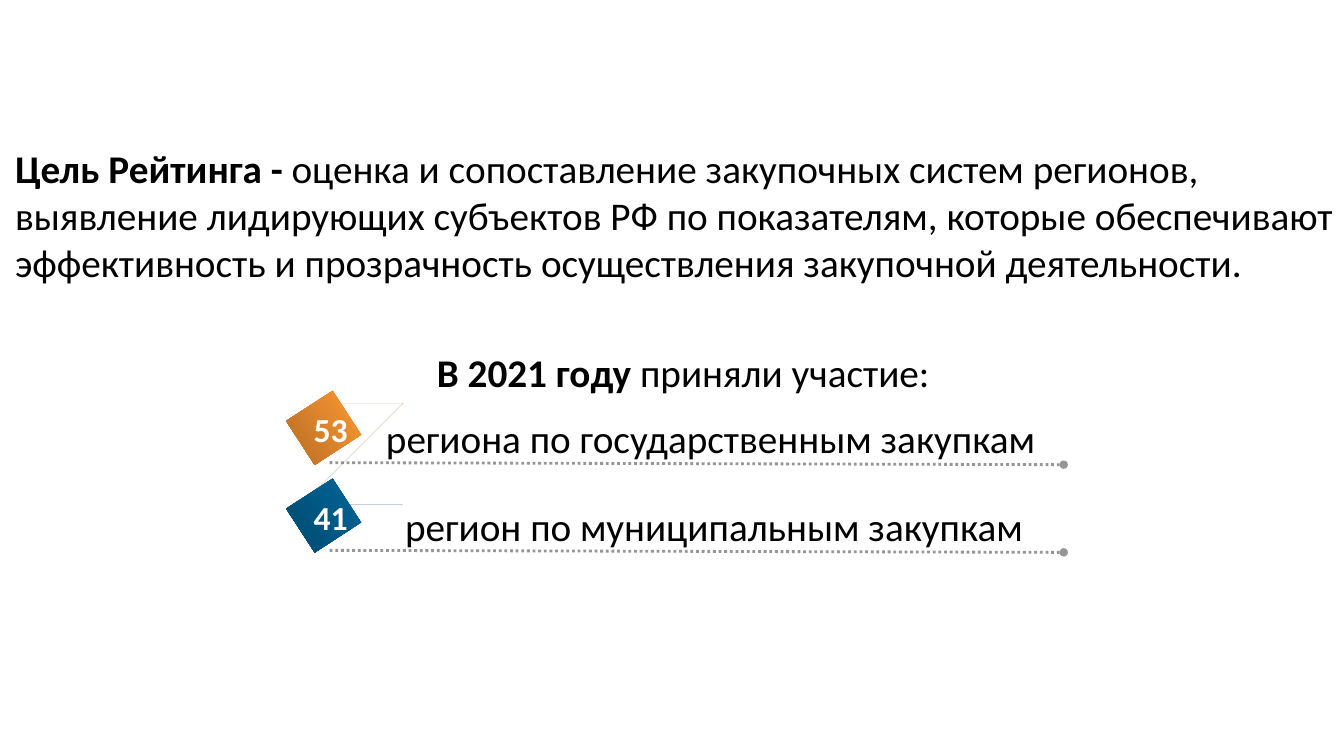
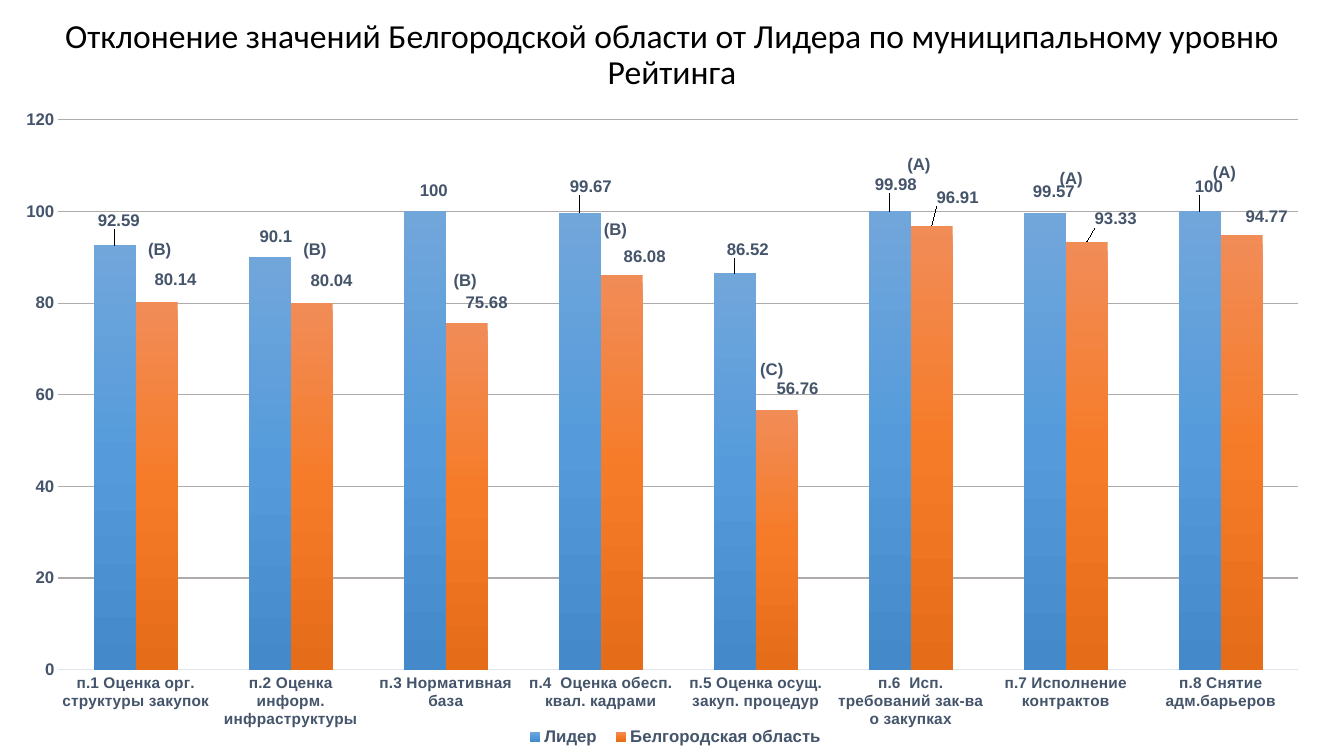
from lxml import etree
from pptx import Presentation
from pptx.chart.data import CategoryChartData
from pptx.dml.color import RGBColor
from pptx.enum.chart import XL_CHART_TYPE, XL_LABEL_POSITION, XL_LEGEND_POSITION, XL_TICK_MARK
from pptx.enum.dml import MSO_LINE
from pptx.enum.shapes import MSO_CONNECTOR, MSO_SHAPE
from pptx.enum.text import MSO_ANCHOR, PP_ALIGN
from pptx.oxml.ns import qn
from pptx.util import Inches, Pt

BLACK, WHITE, SLATE, GREY = "000000", "FFFFFF", "44546A", "969696"
AXIS, GRID = "E0E5EB", "AFABAB"
BODY_FONT, CHART_FONT = "Calibri", "Arial"

PARTICIPANTS = [
    ("53", "региона по государственным закупкам", 3.73, ("FF9933", "B66D24", "EE8D2D", "704214")),
    ("41", "регион по муниципальным закупкам", 3.92, ("006699", "00496D", "005A88", "002D44")),
]
CATEGORIES = [
    "п.1 Оценка орг. структуры закупок", "п.2 Оценка информ. инфраструктуры",
    "п.3 Нормативная база", "п.4  Оценка обесп. квал. кадрами",
    "п.5 Оценка осущ. закуп. процедур", "п.6  Исп. требований зак-ва о закупках",
    "п.7 Исполнение контрактов", "п.8 Снятие адм.барьеров",
]
SERIES = [
    ("Лидер", [92.59, 90.1, 100, 99.67, 86.52, 99.98, 99.57, 100],
     ["71A6DB", "559BDB", "448ACA"],
     [(4, -12), (6, -7), (9, -8), (11, -13), (13, -11), (6, -14), (9, -9), (9, -12)]),
    ("Белгородская область", [80.14, 80.04, 75.68, 86.08, 56.76, 96.91, 93.33, 94.77],
     ["F18C57", "F67B28", "E56C19"],
     [(19, -10), (20, -9), (20, -7), (23, -6), (21, -8), (26, -15), (29, -10), (25, -6)]),
]
GRADES = [("(В)", 1.37, 2.32), ("(B)", 2.91, 2.32), ("(B)", 4.4, 2.63), ("(B)", 5.89, 2.12),
          ("(С)", 7.44, 3.51), ("(A)", 8.9, 1.48), ("(A)", 10.41, 1.61), ("(A)", 11.93, 1.56)]


def rgb(value):
    """Turn a hex string into a colour."""
    return RGBColor.from_string(value)


def style(font, size, color=BLACK, bold=False, name=BODY_FONT):
    """Format a font."""
    font.size, font.bold, font.name = Pt(size), bold, name
    font.color.rgb = rgb(color)


def gradient(fill, element, colors):
    """Fill from top to bottom with evenly spaced colours."""
    fill.gradient()
    fill.gradient_angle = 270
    stops = element.find(".//" + qn("a:gsLst"))
    for old in list(stops):
        stops.remove(old)
    for i, color in enumerate(colors):
        stop = etree.SubElement(stops, qn("a:gs"), pos=str(100000 * i // (len(colors) - 1)))
        etree.SubElement(stop, qn("a:srgbClr"), val=color)


def add_text(shapes, box, parts, size, color=BLACK, align=PP_ALIGN.LEFT, name=BODY_FONT, wrap=True):
    """Add a one-paragraph text box of (text, bold) parts."""
    tf = shapes.add_textbox(*map(Inches, box)).text_frame
    tf.word_wrap = wrap
    p = tf.paragraphs[0]
    p.alignment = align
    for text, bold in parts:
        r = p.add_run()
        r.text = text
        style(r.font, size, color, bold, name)
    return tf


def add_face(shapes, left, top, points, color):
    """Draw one flat side of a cube."""
    corners = [(left + x, top + y) for x, y in points]
    builder = shapes.build_freeform(*corners[0], scale=Inches(1))
    builder.add_line_segments(corners[1:])
    face = builder.convert_to_shape()
    face.shadow.inherit = False
    face.fill.solid()
    face.fill.fore_color.rgb = rgb(color)
    face.line.fill.background()


def add_cube(shapes, left, top, colors):
    """Draw a tilted cube with a shaded front."""
    light, dark, side, base = colors
    add_face(shapes, left, top, [(0.34, -0.1), (0.54, -0.08), (0.79, 0.35), (0.63, 0.35)], side)
    add_face(shapes, left, top, [(0.63, 0.35), (0.79, 0.35), (0.39, 0.62), (0.18, 0.65)], base)
    front = shapes.add_shape(MSO_SHAPE.RECTANGLE, *map(Inches, (left, top, 0.52, 0.55)))
    front.rotation = 57
    front.shadow.inherit = False
    gradient(front.fill, front._element, [light, dark])
    front.line.fill.background()


def add_participant(s, left, top, number, label, label_left, colors):
    """Add a numbered cube with its label and dotted rule."""
    shapes = s.shapes.add_group_shape().shapes
    rule = shapes.add_connector(MSO_CONNECTOR.STRAIGHT, *map(
        Inches, (left + 0.32, top + 0.62, left + 7.6, top + 0.64)))
    rule.line.color.rgb = rgb(GREY)
    rule.line.width = Pt(2)
    rule.line.dash_style = MSO_LINE.ROUND_DOT
    sp_pr = rule._element.spPr
    etree.SubElement(sp_pr.find(qn("a:ln")), qn("a:tailEnd"), type="oval")
    etree.SubElement(sp_pr, qn("a:effectLst"))
    add_cube(shapes, left, top, colors)
    add_text(shapes, (label_left, top + 0.09, 6.87, 0.57), [(label, False)], 28)
    add_text(shapes, (left + 0.06, top + 0.04, 0.54, 0.51), [(number, True)], 24, WHITE,
             PP_ALIGN.CENTER, wrap=False)


def build_goal(prs):
    """Build the slide on the goal and the participants."""
    s = prs.slides.add_slide(prs.slide_layouts[6])
    goal = [("Цель Рейтинга - ", True),
            ("оценка и сопоставление закупочных систем регионов, выявление лидирующих субъектов РФ "
             "по показателям, которые обеспечивают эффективность и прозрачность осуществления "
             "закупочной деятельности.", False)]
    year = [("В 2021 году ", True), ("приняли участие:", False)]
    for box, parts, align in [((0, 1.38, 13.33, 1.51), goal, PP_ALIGN.LEFT),
                              ((0, 3.41, 13.5, 0.57), year, PP_ALIGN.CENTER)]:
        tf = add_text(s.shapes, box, parts, 28, align=align)
        tf.margin_left = Inches(0.15)
    for i, participant in enumerate(PARTICIPANTS):
        add_participant(s, 2.95, 3.97 + 0.87 * i, *participant)


def make_layout(x, y, w=None, h=None, inner=False):
    """Make a manual chart layout, or an offset if no size is given."""
    layout = etree.Element(qn("c:layout"))
    manual = etree.SubElement(layout, qn("c:manualLayout"))
    values = [("x", x), ("y", y)]
    if w is not None:
        values = [("xMode", "edge"), ("yMode", "edge"), *values, ("w", w), ("h", h)]
    if inner:
        values.insert(0, ("layoutTarget", "inner"))
    for tag, value in values:
        etree.SubElement(manual, qn("c:" + tag), val=str(value))
    return layout


def format_axes(chart):
    """Format the axes and gridlines."""
    cat, val = chart.category_axis, chart.value_axis
    for axis, size in ((cat, 11), (val, 12)):
        axis.major_tick_mark = axis.minor_tick_mark = XL_TICK_MARK.NONE
        style(axis.tick_labels.font, size, SLATE, True, CHART_FONT)
    cat.format.line.color.rgb = rgb(AXIS)
    cat.format.line.width = Pt(0.75)
    val.format.line.fill.background()
    val.minimum_scale, val.maximum_scale, val.major_unit = 0, 120, 20
    grid = val.major_gridlines.format.line
    grid.color.rgb = rgb(GRID)
    grid.width = Pt(0.75)


def format_series(series, colors, offsets):
    """Colour a series and shift its value labels."""
    gradient(series.format.fill, series._element, colors)
    labels = series.data_labels
    labels.show_value = True
    labels.position = XL_LABEL_POSITION.OUTSIDE_END
    style(labels.font, 12, SLATE, True, CHART_FONT)
    for i in range(len(offsets)):
        label = series.points[i].data_label
        style(label.font, 12, SLATE, True, CHART_FONT)
        label.position = XL_LABEL_POSITION.OUTSIDE_END
    for item, (dx, dy) in zip(series._element.iter(qn("c:dLbl")), offsets):
        item.insert(1, make_layout(round(dx / 1325, 4), round(dy / 677, 4)))


def add_rating_chart(s, box):
    """Add the column chart of both series."""
    data = CategoryChartData()
    data.categories = CATEGORIES
    for name, values, _, _ in SERIES:
        data.add_series(name, values)
    chart = s.shapes.add_chart(XL_CHART_TYPE.COLUMN_CLUSTERED, *map(Inches, box), data).chart
    style(chart.font, 10)
    chart.has_title = False
    plot = chart.plots[0]
    plot.gap_width, plot.overlap, plot.vary_by_categories = 171, 0, False
    format_axes(chart)
    for series, (_, _, colors, offsets) in zip(plot.series, SERIES):
        format_series(series, colors, offsets)
    chart.has_legend = True
    legend = chart.legend
    legend.position = XL_LEGEND_POSITION.BOTTOM
    legend.include_in_layout = False
    style(legend.font, 12, SLATE, True, CHART_FONT)
    legend._element.find(qn("c:legendPos")).addnext(make_layout(0.39, 0.93, 0.24, 0.03))
    area = chart._chartSpace.find(".//" + qn("c:plotArea"))
    for old in area.findall(qn("c:layout")):
        area.remove(old)
    area.insert(0, make_layout(0.044, 0.034, 0.936, 0.812, True))


def build_deviation(prs):
    """Build the slide comparing the region with the leader."""
    s = prs.slides.add_slide(prs.slide_layouts[5])
    title = s.shapes.title
    title.left, title.top, title.width, title.height = map(Inches, (0, 0, 13.33, 1.1))
    tf = title.text_frame
    tf.text = "Отклонение значений Белгородской области от Лидера по муниципальному уровню Рейтинга"
    tf.vertical_anchor = MSO_ANCHOR.MIDDLE
    p = tf.paragraphs[0]
    p.alignment, p.line_spacing = PP_ALIGN.CENTER, 0.9
    style(p.runs[0].font, 24)
    add_rating_chart(s, (0, 0.96, 13.14, 6.72))
    for grade, left, top in GRADES:
        add_text(s.shapes, (left, top, 0.49, 0.29), [(grade, True)], 12, SLATE, name=CHART_FONT)


def main():
    """Build and save the presentation."""
    prs = Presentation()
    prs.slide_width, prs.slide_height = Inches(13.33), Inches(7.5)
    build_goal(prs)
    build_deviation(prs)
    prs.save("out.pptx")


if __name__ == "__main__":
    main()
